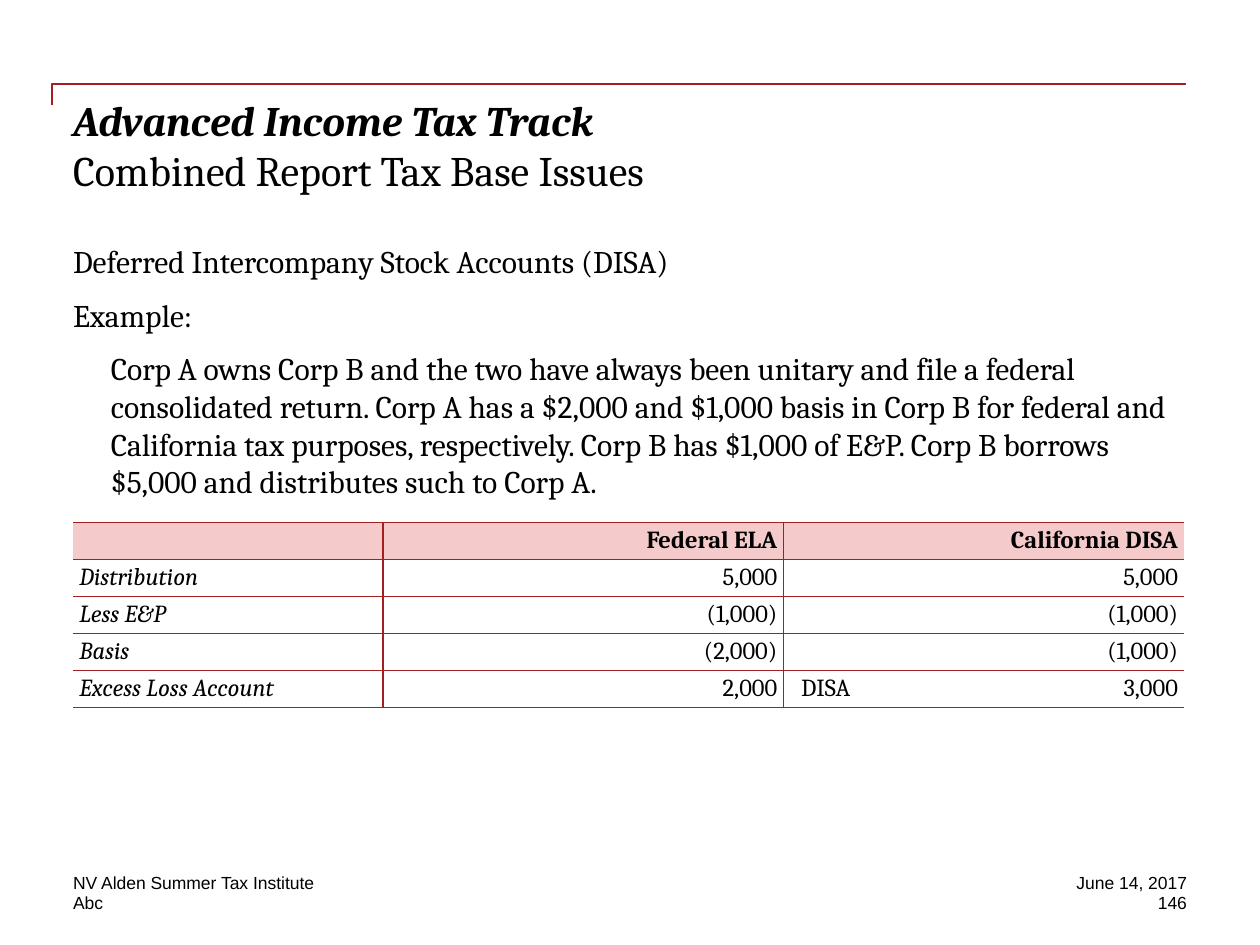
from dataclasses import dataclass

from lxml import etree
from pptx import Presentation
from pptx.dml.color import RGBColor
from pptx.enum.shapes import MSO_CONNECTOR
from pptx.enum.text import MSO_ANCHOR, PP_ALIGN
from pptx.oxml.ns import qn
from pptx.util import Inches, Pt

LEFT, RIGHT = PP_ALIGN.LEFT, PP_ALIGN.RIGHT
TOP, BOTTOM = MSO_ANCHOR.TOP, MSO_ANCHOR.BOTTOM
ELBOW = MSO_CONNECTOR.ELBOW

COLORS = {"text": "000000", "rule": "A32020", "header": "F5CACA", "cell": "FFFFFF"}
SERIF, SANS = "Cambria", "Arial"
MARGIN, CONTENT_WIDTH = 0.58, 8.83
TABLE_SIZE = 14
COLUMN_WIDTHS = (2.46, 3.18, 3.18)
ROW_HEIGHT = 0.28
TAB_STOP = 2.56

ROWS = (
    ("", "Federal ELA", "California DISA"),
    ("Distribution", "5,000", "5,000"),
    ("Less E&P", "(1,000)", "(1,000)"),
    ("Basis", "(2,000)", "(1,000)"),
    ("Excess Loss Account", "2,000", "DISA\t3,000"),
)


@dataclass(frozen=True)
class FooterItem:
    text: str
    left: float
    top: float
    width: float
    align: PP_ALIGN = LEFT
    anchor: MSO_ANCHOR = TOP


@dataclass(frozen=True)
class BodyParagraph:
    text: str
    indent: float = 0


FOOTER = (
    FooterItem("Abc", MARGIN, 7.08, 2.83),
    FooterItem("June 14, 2017", 7.75, 6.92, 1.67, RIGHT),
    FooterItem("NV Alden Summer Tax Institute", MARGIN, 6.92, 5.75, anchor=BOTTOM),
    FooterItem("146", 7.75, 7.08, 1.67, RIGHT),
)

BODY = (
    BodyParagraph("Deferred Intercompany Stock Accounts (DISA)"),
    BodyParagraph("Example:"),
    BodyParagraph(
        "Corp A owns Corp B and the two have always been unitary and file a federal "
        "consolidated return. Corp A has a $2,000 and $1,000 basis in Corp B for federal "
        "and California tax purposes, respectively. Corp B has $1,000 of E&P. Corp B "
        "borrows $5,000 and distributes such to Corp A.",
        indent=0.3,
    ),
)


def write_text(paragraph, text: str, *, size: float, font: str = SERIF, bold: bool = False,
               italic: bool = False, align: PP_ALIGN = LEFT) -> None:
    paragraph.alignment = align
    run = paragraph.add_run()
    run.text = text
    run.font.size = Pt(size)
    run.font.name = font
    run.font.bold = bold
    run.font.italic = italic
    run.font.color.rgb = RGBColor.from_string(COLORS["text"])


def add_text_frame(slide, left: float, top: float, width: float, height: float,
                   anchor: MSO_ANCHOR = TOP):
    """Add a wrapping text box without insets and return its text frame."""
    box = slide.shapes.add_textbox(Inches(left), Inches(top), Inches(width), Inches(height))
    frame = box.text_frame
    frame.word_wrap = True
    frame.vertical_anchor = anchor
    frame.margin_left = frame.margin_right = frame.margin_top = frame.margin_bottom = 0
    return frame


def add_title_rule(slide) -> None:
    """Draw the rule above the title with its short drop at the left end."""
    rule = slide.shapes.add_connector(ELBOW, Inches(5), Inches(5.25), Inches(4.83), Inches(-3.75))
    rule.rotation = 90
    rule.line.color.rgb = RGBColor.from_string(COLORS["rule"])
    rule.line.width = Pt(1)
    properties = rule._element.spPr
    properties.find(qn("a:prstGeom")).set("prst", "bentConnector2")
    etree.SubElement(properties, qn("a:effectLst"))


def add_title(slide) -> None:
    paragraph = add_text_frame(slide, MARGIN, 0.75, CONTENT_WIDTH, 1).paragraphs[0]
    write_text(paragraph, "Advanced Income Tax Track", size=24, bold=True, italic=True)
    paragraph.add_line_break()
    write_text(paragraph, "Combined Report Tax Base Issues", size=24)


def add_body(slide) -> None:
    frame = add_text_frame(slide, MARGIN, 1.92, CONTENT_WIDTH, 2.08)
    for index, item in enumerate(BODY):
        paragraph = frame.add_paragraph() if index else frame.paragraphs[0]
        write_text(paragraph, item.text, size=18)
        paragraph.space_after = Pt(9)
        if item.indent:
            paragraph._p.get_or_add_pPr().set("marL", str(Inches(item.indent)))


def add_footer_item(slide, item: FooterItem) -> None:
    frame = add_text_frame(slide, item.left, item.top, item.width, 0.17, item.anchor)
    write_text(frame.paragraphs[0], item.text, size=10, font=SANS, align=item.align)


def set_borders(cell, visible_sides: str) -> None:
    """Rule the sides named by letter (L, R, T, B) and clear the others."""
    properties = cell._tc.get_or_add_tcPr()
    for side in "LRTB":
        line = etree.SubElement(properties, qn(f"a:ln{side}"), w=str(Pt(0.75)))
        if side in visible_sides:
            fill = etree.SubElement(line, qn("a:solidFill"))
            etree.SubElement(fill, qn("a:srgbClr"), val=COLORS["rule"])
        else:
            etree.SubElement(line, qn("a:noFill"))


def fill_cell(cell, text: str, row: int, column: int) -> None:
    cell.margin_left = cell.margin_right = Inches(0.05)
    cell.margin_top = cell.margin_bottom = Inches(0.03)
    last_column = len(COLUMN_WIDTHS) - 1
    set_borders(cell, "TB" + ("L" if column else "") + ("R" if column < last_column else ""))
    cell.fill.solid()
    cell.fill.fore_color.rgb = RGBColor.from_string(COLORS["cell" if row else "header"])
    paragraph = cell.text_frame.paragraphs[0]
    if not text:
        etree.SubElement(paragraph._p, qn("a:endParaRPr"), sz=str(TABLE_SIZE * 100))
        return
    write_text(paragraph, text, size=TABLE_SIZE, bold=row == 0, italic=column == 0,
               align=RIGHT if column else LEFT)
    if "\t" in text:
        tabs = etree.SubElement(paragraph._p.get_or_add_pPr(), qn("a:tabLst"))
        etree.SubElement(tabs, qn("a:tab"), pos=str(Inches(TAB_STOP)), algn="l")


def add_account_table(slide) -> None:
    table = slide.shapes.add_table(
        len(ROWS), len(COLUMN_WIDTHS), Inches(MARGIN), Inches(4.15),
        Inches(sum(COLUMN_WIDTHS)), Inches(ROW_HEIGHT * len(ROWS)),
    ).table
    table.horz_banding = False
    for column, width in zip(table.columns, COLUMN_WIDTHS):
        column.width = Inches(width)
    for row, texts in enumerate(ROWS):
        table.rows[row].height = Inches(ROW_HEIGHT)
        for column, text in enumerate(texts):
            fill_cell(table.cell(row, column), text, row, column)


def main() -> None:
    presentation = Presentation()
    presentation.slide_width = Inches(10)
    presentation.slide_height = Inches(7.5)
    slide = presentation.slides.add_slide(presentation.slide_layouts[6])
    add_title_rule(slide)
    add_body(slide)
    add_title(slide)
    for item in FOOTER:
        add_footer_item(slide, item)
    add_account_table(slide)
    presentation.save("out.pptx")


if __name__ == "__main__":
    main()
